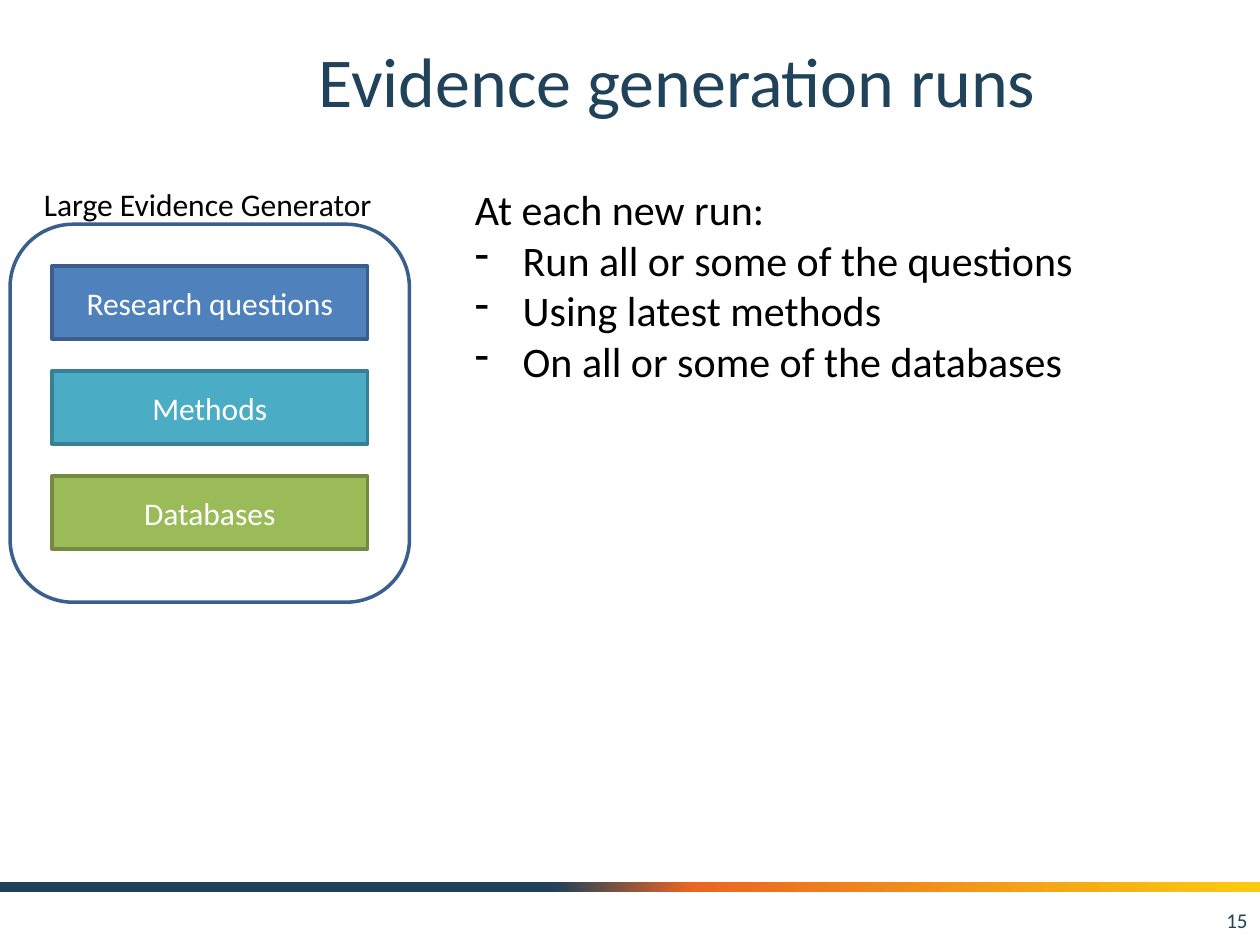
from copy import deepcopy

from lxml import etree
from pptx import Presentation
from pptx import util as u
from pptx.dml.color import RGBColor
from pptx.enum import shapes, text
from pptx.oxml.ns import qn

FONT = "Calibri"
NAVY, BLACK, WHITE, BLUE_EDGE = "20425A", "000000", "FFFFFF", "3A5F8C"
LEFT, CENTER, RIGHT = text.PP_ALIGN.LEFT, text.PP_ALIGN.CENTER, text.PP_ALIGN.RIGHT
TOP, MIDDLE = text.MSO_ANCHOR.TOP, text.MSO_ANCHOR.MIDDLE
RECT, ROUND = shapes.MSO_SHAPE.RECTANGLE, shapes.MSO_SHAPE.ROUNDED_RECTANGLE


def color(hex_text):
    return RGBColor.from_string(hex_text)


def inches(*lengths):
    return [u.Inches(length) for length in lengths]


def add_span(para, words, size, ink, align=LEFT):
    para.alignment = align
    span = para.add_run()
    span.text = words
    span.font.name, span.font.size = FONT, u.Pt(size)
    span.font.color.rgb = color(ink)


def add_text_box(page, box, anchor=TOP, wrap=True):
    frame = page.shapes.add_textbox(*inches(*box)).text_frame
    frame.word_wrap, frame.vertical_anchor = wrap, anchor
    return frame


def add_block(page, box, kind=RECT, fill=None, edge=None):
    block = page.shapes.add_shape(kind, *inches(*box))
    block.shadow.inherit = False
    if fill:
        block.fill.solid()
        block.fill.fore_color.rgb = color(fill)
    else:
        block.fill.background()
    if edge:
        block.line.color.rgb, block.line.width = color(edge), u.Pt(2)
    else:
        block.line.fill.background()
    return block


def add_gradient_bar(page, box, stops):
    bar = add_block(page, box)
    bar.fill.gradient()
    bar.fill.gradient_angle = 0
    stop_list = bar._element.spPr.find(".//" + qn("a:gsLst"))
    while len(stop_list) < len(stops):
        stop_list.append(deepcopy(stop_list[0]))
    for stop, (position, shade) in zip(bar.fill.gradient_stops, stops):
        stop.position, stop.color.rgb = position, color(shade)


def add_title(page, box, words):
    para = add_text_box(page, box, MIDDLE).paragraphs[0]
    add_span(para, words, 40, NAVY, CENTER)


def add_footer(page, box, number):
    left, top, width, height = box
    add_gradient_bar(page, (left, top, width, 0.08),
                     [(0.44, NAVY), (0.55, "EB6622"), (1, "FCCB10")])
    number_width = 2.33
    number_box = (left + width - number_width, top + 0.1, number_width, height - 0.1)
    add_span(add_text_box(page, number_box, MIDDLE).paragraphs[0], number, 12, NAVY, RIGHT)


def add_generator(page, box, caption, parts):
    """Captioned round frame holding evenly spaced labelled bars."""
    left, top, width, height = box
    pitch, bar_height, inset = 2.5 / 3, 0.58, width * 0.105
    for row, (label, fill, edge) in enumerate(parts):
        bar_box = (left + inset, top + 0.33 + row * pitch, width - 2 * inset, bar_height)
        bar = add_block(page, bar_box, fill=fill, edge=edge)
        bar.text_frame.vertical_anchor = MIDDLE
        add_span(bar.text_frame.paragraphs[0], label, 18, WHITE, CENTER)
    add_block(page, box, ROUND, edge=BLUE_EDGE)
    caption_box = (left + 0.17, top - 0.36, 2.84, 0.4)
    add_span(add_text_box(page, caption_box, wrap=False).paragraphs[0], caption, 18, BLACK)


def add_dash(para):
    props = para._p.get_or_add_pPr()
    indent = u.Inches(0.38)
    props.set("marL", str(indent))
    props.set("indent", str(-indent))
    etree.SubElement(props, qn("a:buFontTx"))
    etree.SubElement(props, qn("a:buChar")).set("char", "-")


def add_run_steps(page, box, lead, steps):
    frame = add_text_box(page, box)
    add_span(frame.paragraphs[0], lead, 24, BLACK)
    for step in steps:
        para = frame.add_paragraph()
        add_dash(para)
        add_span(para, step, 24, BLACK)


def main():
    deck = Presentation()
    deck.slide_width, deck.slide_height = inches(10, 7.5)
    page = deck.slides.add_slide(deck.slide_layouts[6])
    add_footer(page, (0, 7, 10, 0.5), "15")
    add_title(page, (1.25, 0.17, 8.25, 0.92), "Evidence generation runs")
    add_generator(page, (0.08, 1.78, 3.17, 3), "Large Evidence Generator", [
        ("Research questions", "4F81BD", BLUE_EDGE),
        ("Methods", "4BACC6", "377F92"),
        ("Databases", "9BBB59", "738A42"),
    ])
    add_run_steps(page, (3.67, 1.41, 6.08, 2.12), "At each new run:", [
        "Run all or some of the questions",
        "Using latest methods",
        "On all or some of the databases",
    ])
    deck.save("out.pptx")


if __name__ == "__main__":
    main()
